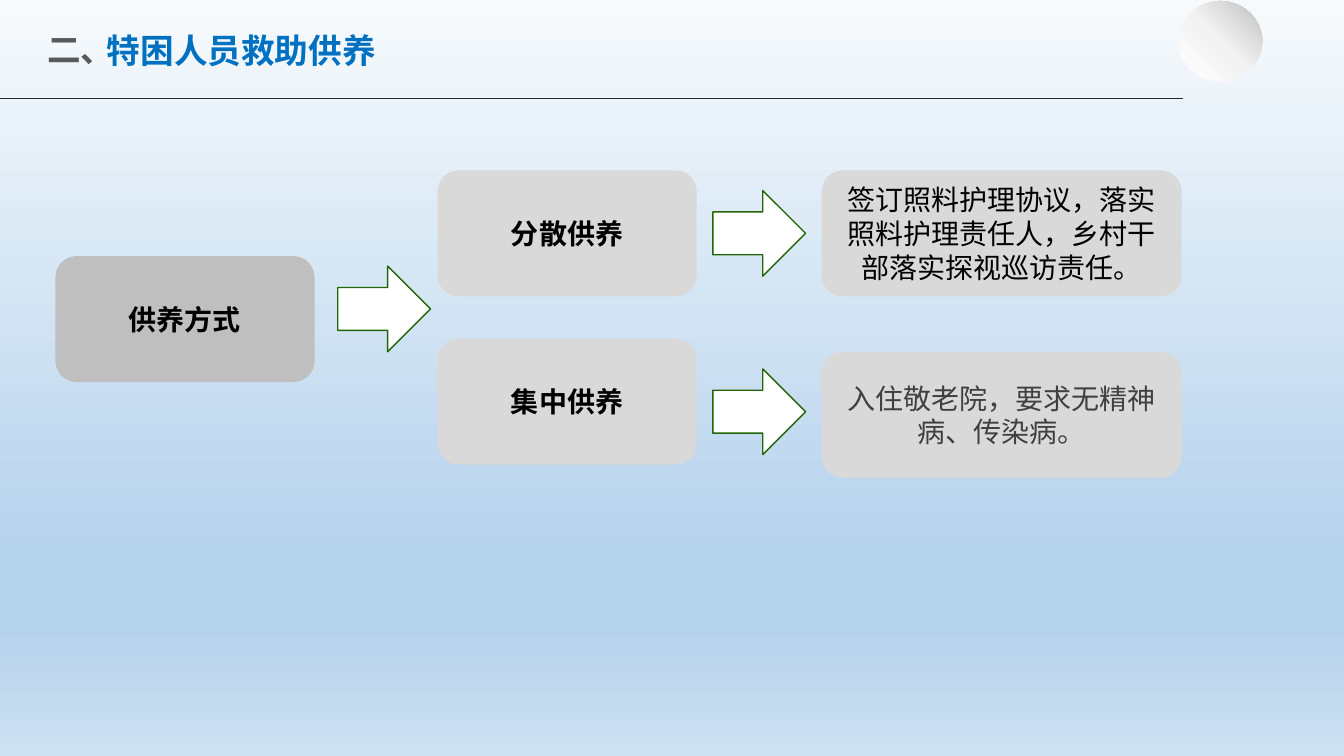
from copy import deepcopy

from lxml import etree
from pptx import Presentation
from pptx.dml.color import RGBColor
from pptx.enum.shapes import MSO_CONNECTOR, MSO_SHAPE
from pptx.enum.text import MSO_ANCHOR, MSO_AUTO_SIZE, PP_ALIGN
from pptx.oxml.ns import qn
from pptx.util import Inches, Pt

ROUND_RECT = MSO_SHAPE.ROUNDED_RECTANGLE
RIGHT_ARROW = MSO_SHAPE.RIGHT_ARROW
OVAL = MSO_SHAPE.OVAL
STRAIGHT = MSO_CONNECTOR.STRAIGHT
TOP, MIDDLE = MSO_ANCHOR.TOP, MSO_ANCHOR.MIDDLE
LEFT, CENTER = PP_ALIGN.LEFT, PP_ALIGN.CENTER
GROW = MSO_AUTO_SIZE.SHAPE_TO_FIT_TEXT

BLACK = RGBColor(0x00, 0x00, 0x00)
WHITE = RGBColor(0xFF, 0xFF, 0xFF)
RULE = RGBColor(0x26, 0x26, 0x26)
DARK_GRAY = RGBColor(0x40, 0x40, 0x40)
NUMBER_GRAY = RGBColor(0x59, 0x59, 0x59)
MID_GRAY = RGBColor(0xBF, 0xBF, 0xBF)
LIGHT_GRAY = RGBColor(0xD9, 0xD9, 0xD9)
PALE_GRAY = RGBColor(0xF2, 0xF2, 0xF2)
TITLE_BLUE = RGBColor(0x00, 0x70, 0xC0)
ARROW_GREEN = RGBColor(0x21, 0x66, 0x06)
SKY_TOP = RGBColor(0xF7, 0xFA, 0xFD)
SKY = RGBColor(0xB5, 0xD2, 0xEC)
SKY_BOTTOM = RGBColor(0xCE, 0xE1, 0xF2)

CJK = "Noto Sans CJK SC"


def fill_gradient(fill, element, angle, stops):
    """Fill with (position, colour) stops; the angle runs counter-clockwise."""
    fill.gradient()
    fill.gradient_angle = angle
    stop_list = element.xpath(".//a:gsLst")[0]
    for _ in stops[2:]:
        stop_list.append(deepcopy(stop_list[0]))
    for stop, (position, color) in zip(fill.gradient_stops, stops):
        stop.position = position
        stop.color.rgb = color


def write_text(tf, text, align, size, color, bold=True, name=CJK):
    tf.word_wrap = True
    p = tf.paragraphs[0]
    p.alignment = align
    r = p.add_run()
    r.text = text
    for key, value in dict(size=Pt(size), bold=bold, name=name).items():
        setattr(r.font, key, value)
    r.font.color.rgb = color
    etree.SubElement(r.font._element, qn("a:ea"), typeface=CJK)


prs = Presentation()
prs.slide_width, prs.slide_height = Inches(13.33), Inches(7.5)
s = prs.slides.add_slide(prs.slide_layouts[5])
fill_gradient(s.background.fill, s.element, 270,
              [(0, SKY_TOP), (0.74, SKY), (0.83, SKY), (1, SKY_BOTTOM)])

# Heading
rule = s.shapes.add_connector(STRAIGHT, 0, Inches(0.98), Inches(11.73), Inches(0.98))
rule.line.color.rgb = RULE
rule.line.width = Pt(0.5)
etree.SubElement(rule.element.spPr, qn("a:effectLst"))

ball = s.shapes.add_shape(OVAL, Inches(11.69), Inches(0.01), Inches(0.83), Inches(0.8))
ball.shadow.inherit = False
ball.line.fill.background()
fill_gradient(ball.fill, ball.element, 45,
              [(0, WHITE), (0.51, PALE_GRAY), (1, MID_GRAY)])

number = s.shapes.add_textbox(Inches(0.37), Inches(0.24), Inches(0.87), Inches(0.5))
write_text(number.text_frame, "二、", LEFT, 24, NUMBER_GRAY)
number.text_frame.word_wrap = False
number.text_frame.auto_size = GROW

title = s.shapes.title
title.left, title.top = Inches(0.96), Inches(0.25)
title.width, title.height = Inches(9.32), Inches(0.5)
write_text(title.text_frame, "特困人员救助供养", LEFT, 24, TITLE_BLUE)
title.text_frame.vertical_anchor = TOP
title.text_frame.auto_size = GROW

# Support modes and what each requires
label = dict(color=BLACK)
boxes = [
    (0.55, 2.54, 2.57, MID_GRAY, "供养方式", label),
    (4.34, 1.69, 2.57, LIGHT_GRAY, "分散供养", label),
    (4.34, 3.36, 2.57, LIGHT_GRAY, "集中供养", label),
    (8.15, 1.69, 3.57, LIGHT_GRAY,
     "签订照料护理协议，落实照料护理责任人，乡村干部落实探视巡访责任。",
     dict(color=BLACK, bold=False)),
    (8.15, 3.49, 3.57, LIGHT_GRAY, "入住敬老院，要求无精神病、传染病。",
     dict(color=DARK_GRAY, bold=False, name="Arial")),
]
for x, y, width, color, text, style in boxes:
    box = s.shapes.add_shape(ROUND_RECT, Inches(x), Inches(y), Inches(width), Inches(1.25))
    box.shadow.inherit = False
    box.fill.solid()
    box.fill.fore_color.rgb = color
    box.line.fill.background()
    box.text_frame.vertical_anchor = MIDDLE
    write_text(box.text_frame, text, CENTER, 20, **style)

for x, y in [(3.35, 2.64), (7.07, 1.89), (7.07, 3.66)]:
    arrow = s.shapes.add_shape(RIGHT_ARROW, Inches(x), Inches(y), Inches(0.92), Inches(0.85))
    arrow.shadow.inherit = False
    arrow.fill.solid()
    arrow.fill.fore_color.rgb = WHITE
    arrow.line.color.rgb = ARROW_GREEN
    arrow.line.width = Pt(1)

prs.save("out.pptx")
